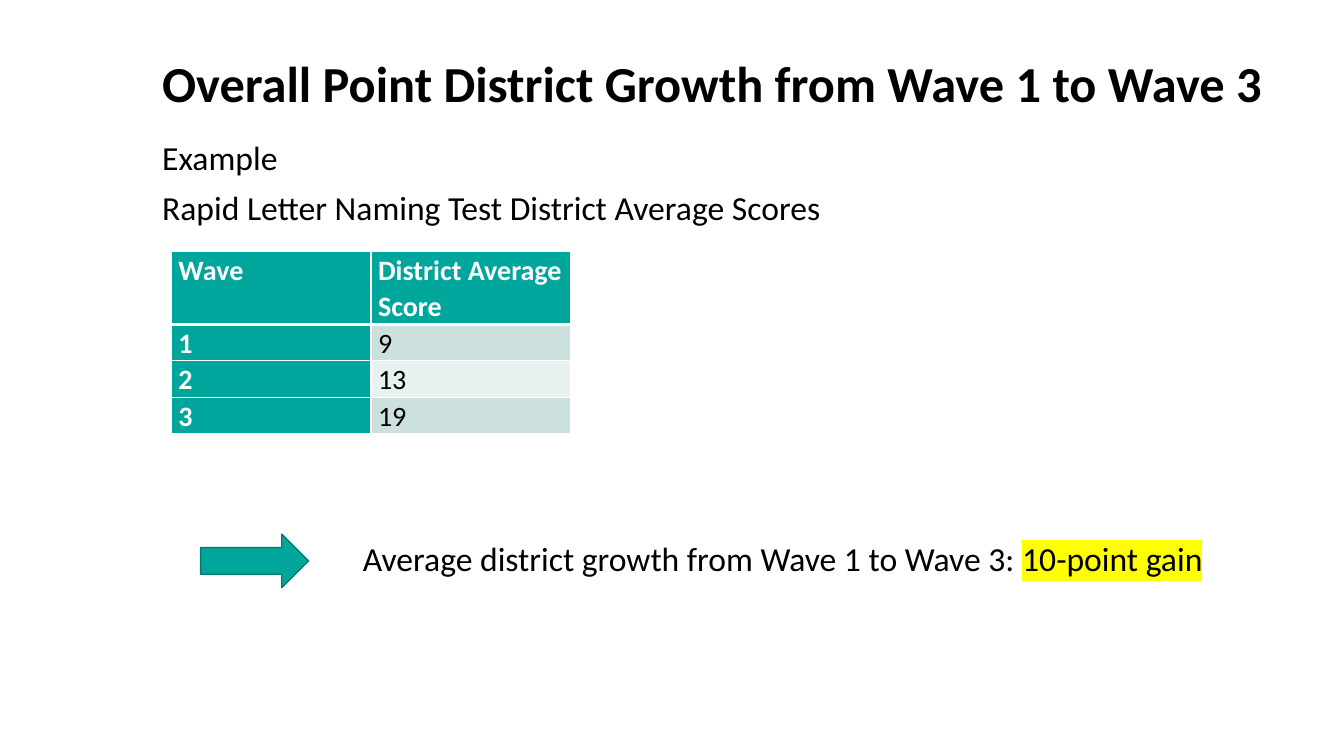
from dataclasses import dataclass

from lxml.etree import SubElement
from pptx import Presentation
from pptx.dml.color import RGBColor
from pptx.enum.shapes import MSO_SHAPE
from pptx.enum.text import MSO_ANCHOR
from pptx.oxml import parse_xml
from pptx.oxml.ns import nsdecls, qn
from pptx.util import Inches, Pt

TITLE = "Overall Point District Growth from Wave 1 to Wave 3"
INTRO = ["Example", "Rapid Letter Naming Test District Average Scores"]
SCORES = [
    ("Wave", "District Average Score"),
    ("1", "9"),
    ("2", "13"),
    ("3", "19"),
]
CONCLUSION = "Average district growth from Wave 1 to Wave 3: "
GAIN = "10-point gain"


@dataclass(frozen=True)
class Theme:
    font: str = "Calibri"
    text: str = "000000"
    white: str = "FFFFFF"
    teal: str = "00A69B"
    teal_dark: str = "007B73"
    bands: tuple = ("CCE1DE", "E7F1EF")
    highlight: str = "FFFF00"
    title_size: int = 36
    body_size: int = 24
    table_size: int = 20


THEME = Theme()
LEFT, WIDTH = 1.51, 11.26
TABLE_LEFT, TABLE_TOP, COLUMN_WIDTH = 1.7, 2.49, 1.98
HEADER_HEIGHT, ROW_HEIGHT = 0.73, 0.36
ARROW_LEFT, ARROW_TOP, ARROW_WIDTH, ARROW_HEIGHT = 1.99, 5.3, 1.07, 0.53
CONCLUSION_LEFT = 3.5


def add_run(paragraph, text, size, color=THEME.text, bold=False):
    run = paragraph.add_run()
    run.text = text
    run.font.name = THEME.font
    run.font.size = Pt(size)
    run.font.bold = bold
    run.font.color.rgb = RGBColor.from_string(color)
    return run


def highlight(run, color):
    marker = parse_xml(
        f'<a:highlight {nsdecls("a")}><a:srgbClr val="{color}"/></a:highlight>'
    )
    run.font._element.find(qn("a:solidFill")).addnext(marker)


def add_text_frame(slide, left, top, width, height, anchor):
    frame = slide.shapes.add_textbox(
        Inches(left), Inches(top), Inches(width), Inches(height)
    ).text_frame
    frame.word_wrap = True
    frame.vertical_anchor = anchor
    return frame


def set_borders(cell, widths):
    properties = cell._tc.get_or_add_tcPr()
    for index, (side, width) in enumerate(widths.items()):
        line = SubElement(properties, qn(f"a:ln{side}"), w=str(Pt(width)))
        fill = SubElement(line, qn("a:solidFill"))
        SubElement(fill, qn("a:srgbClr"), val=THEME.white)
        properties.insert(index, line)


def add_scores(slide):
    rows, columns = len(SCORES), len(SCORES[0])
    table = slide.shapes.add_table(
        rows, columns, Inches(TABLE_LEFT), Inches(TABLE_TOP),
        Inches(COLUMN_WIDTH * columns),
        Inches(HEADER_HEIGHT + ROW_HEIGHT * (rows - 1)),
    ).table
    table.first_col = True
    for column in table.columns:
        column.width = Inches(COLUMN_WIDTH)
    for row_index, values in enumerate(SCORES):
        table.rows[row_index].height = Inches(ROW_HEIGHT if row_index else HEADER_HEIGHT)
        for column_index, value in enumerate(values):
            cell = table.cell(row_index, column_index)
            is_heading = row_index == 0 or column_index == 0
            fill = THEME.teal if is_heading else THEME.bands[(row_index - 1) % 2]
            cell.fill.solid()
            cell.fill.fore_color.rgb = RGBColor.from_string(fill)
            cell.margin_left = cell.margin_right = Inches(0.07)
            cell.margin_top = cell.margin_bottom = 0
            paragraph = cell.text_frame.paragraphs[0]
            paragraph.line_spacing = 1.07
            color = THEME.white if is_heading else THEME.text
            add_run(paragraph, value, THEME.table_size, color, is_heading)
            set_borders(cell, {
                "L": 1, "R": 1,
                "T": 3 if row_index == 1 else 1,
                "B": 3 if row_index == 0 else 1,
            })


def add_arrow(slide):
    arrow = slide.shapes.add_shape(
        MSO_SHAPE.RIGHT_ARROW, Inches(ARROW_LEFT), Inches(ARROW_TOP),
        Inches(ARROW_WIDTH), Inches(ARROW_HEIGHT),
    )
    arrow.shadow.inherit = False
    arrow.fill.solid()
    arrow.fill.fore_color.rgb = RGBColor.from_string(THEME.teal)
    arrow.line.color.rgb = RGBColor.from_string(THEME.teal_dark)
    arrow.line.width = Pt(1)


def main():
    presentation = Presentation()
    presentation.slide_width = Inches(13.33)
    presentation.slide_height = Inches(7.5)
    slide = presentation.slides.add_slide(presentation.slide_layouts[6])

    title = add_text_frame(slide, LEFT, 0.4, WIDTH, 0.84, MSO_ANCHOR.MIDDLE)
    add_run(title.paragraphs[0], TITLE, THEME.title_size, bold=True)

    intro = add_text_frame(slide, LEFT, 1.35, WIDTH, 1.0, MSO_ANCHOR.TOP)
    for index, text in enumerate(INTRO):
        paragraph = intro.add_paragraph() if index else intro.paragraphs[0]
        paragraph.line_spacing = 0.9
        if index:
            paragraph.space_before = Pt(10)
        add_run(paragraph, text, THEME.body_size)

    add_scores(slide)
    add_arrow(slide)

    conclusion = add_text_frame(
        slide, CONCLUSION_LEFT, ARROW_TOP, LEFT + WIDTH - CONCLUSION_LEFT,
        ARROW_HEIGHT, MSO_ANCHOR.MIDDLE,
    )
    paragraph = conclusion.paragraphs[0]
    paragraph.line_spacing = 0.9
    add_run(paragraph, CONCLUSION, THEME.body_size)
    highlight(add_run(paragraph, GAIN, THEME.body_size), THEME.highlight)

    presentation.save("out.pptx")


if __name__ == "__main__":
    main()
